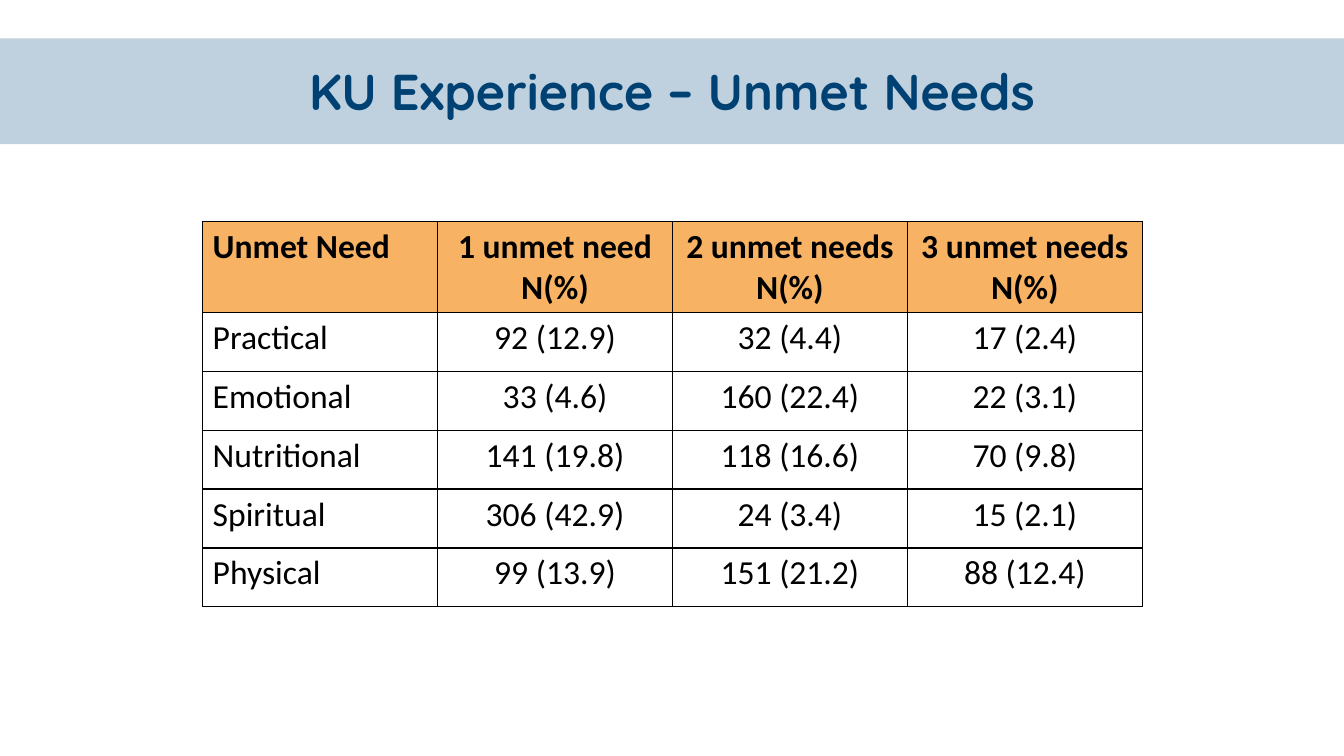
from dataclasses import dataclass

from lxml import etree
from pptx import Presentation
from pptx.dml.color import RGBColor
from pptx.enum.shapes import MSO_SHAPE
from pptx.enum.text import MSO_ANCHOR, PP_ALIGN
from pptx.oxml.ns import qn
from pptx.util import Inches, Pt

RECT = MSO_SHAPE.RECTANGLE
CENTER, LEFT = PP_ALIGN.CENTER, PP_ALIGN.LEFT
TOP = MSO_ANCHOR.TOP


@dataclass(frozen=True)
class Theme:
    band: str = "00497F"
    band_alpha: int = 25
    title: str = "004174"
    header: str = "F7B363"
    ink: str = "000000"
    title_font: str = "Quicksand"
    body_font: str = "Calibri"
    title_size: int = 36
    body_size: int = 24
    border: int = 1


THEME = Theme()

NEEDS = [
    ["Unmet Need", "1 unmet need\nN(%)", "2 unmet needs\nN(%)", "3 unmet needs N(%)"],
    ["Practical", "92 (12.9)", "32 (4.4)", "17 (2.4)"],
    ["Emotional", "33 (4.6)", "160 (22.4)", "22 (3.1)"],
    ["Nutritional", "141 (19.8)", "118 (16.6)", "70 (9.8)"],
    ["Spiritual", "306 (42.9)", "24 (3.4)", "15 (2.1)"],
    ["Physical", "99 (13.9)", "151 (21.2)", "88 (12.4)"],
]


def style_paragraph(p, font, size, color, bold, align):
    p.alignment = align
    p.font.name = font
    p.font.size = Pt(size)
    p.font.bold = bold
    p.font.color.rgb = RGBColor.from_string(color)


def set_borders(cell):
    tc_pr = cell._tc.get_or_add_tcPr()
    for i, side in enumerate(("lnL", "lnR", "lnT", "lnB")):
        ln = etree.Element(qn(f"a:{side}"), w=str(Pt(THEME.border)))
        fill = etree.SubElement(ln, qn("a:solidFill"))
        etree.SubElement(fill, qn("a:srgbClr"), val=THEME.ink)
        tc_pr.insert(i, ln)


def add_title_band(s, x, y, w, h, title):
    band = s.shapes.add_shape(RECT, Inches(x), Inches(y), Inches(w), Inches(h))
    band.shadow.inherit = False
    band.line.fill.background()
    band.fill.solid()
    band.fill.fore_color.rgb = RGBColor.from_string(THEME.band)
    color = band._element.spPr.find(qn("a:solidFill"))[0]
    etree.SubElement(color, qn("a:alpha"), val=str(THEME.band_alpha * 1000))

    margin, text_h = 1.56, 0.71
    box = s.shapes.add_textbox(Inches(x + margin), Inches(y + (h - text_h) / 2),
                               Inches(w - 2 * margin), Inches(text_h))
    tf = box.text_frame
    tf.word_wrap = True
    tf.text = title
    style_paragraph(tf.paragraphs[0], THEME.title_font, THEME.title_size,
                    THEME.title, True, CENTER)


def add_needs_table(s, x, y, w, h, rows, header_h=0.82):
    n_rows, n_cols = len(rows), len(rows[0])
    table = s.shapes.add_table(n_rows, n_cols, Inches(x), Inches(y),
                               Inches(w), Inches(h)).table
    table.horz_banding = False
    for col in table.columns:
        col.width = Inches(w / n_cols)
    for r, values in enumerate(rows):
        is_header = r == 0
        table.rows[r].height = Inches(header_h if is_header else (h - header_h) / (n_rows - 1))
        for c, value in enumerate(values):
            cell = table.cell(r, c)
            cell.text = value
            cell.vertical_anchor = TOP
            if is_header:
                cell.fill.solid()
                cell.fill.fore_color.rgb = RGBColor.from_string(THEME.header)
            else:
                cell.fill.background()
            set_borders(cell)
            for p in cell.text_frame.paragraphs:
                style_paragraph(p, THEME.body_font, THEME.body_size, THEME.ink,
                                is_header, CENTER if c else LEFT)


def main():
    prs = Presentation()
    prs.slide_width, prs.slide_height = Inches(13.33), Inches(7.5)
    s = prs.slides.add_slide(prs.slide_layouts[6])
    add_title_band(s, 0, 0.38, 13.33, 1.05, "KU Experience – Unmet Needs")
    add_needs_table(s, 2.01, 2.2, 9.32, 3.74, NEEDS)
    prs.save("out.pptx")


if __name__ == "__main__":
    main()
